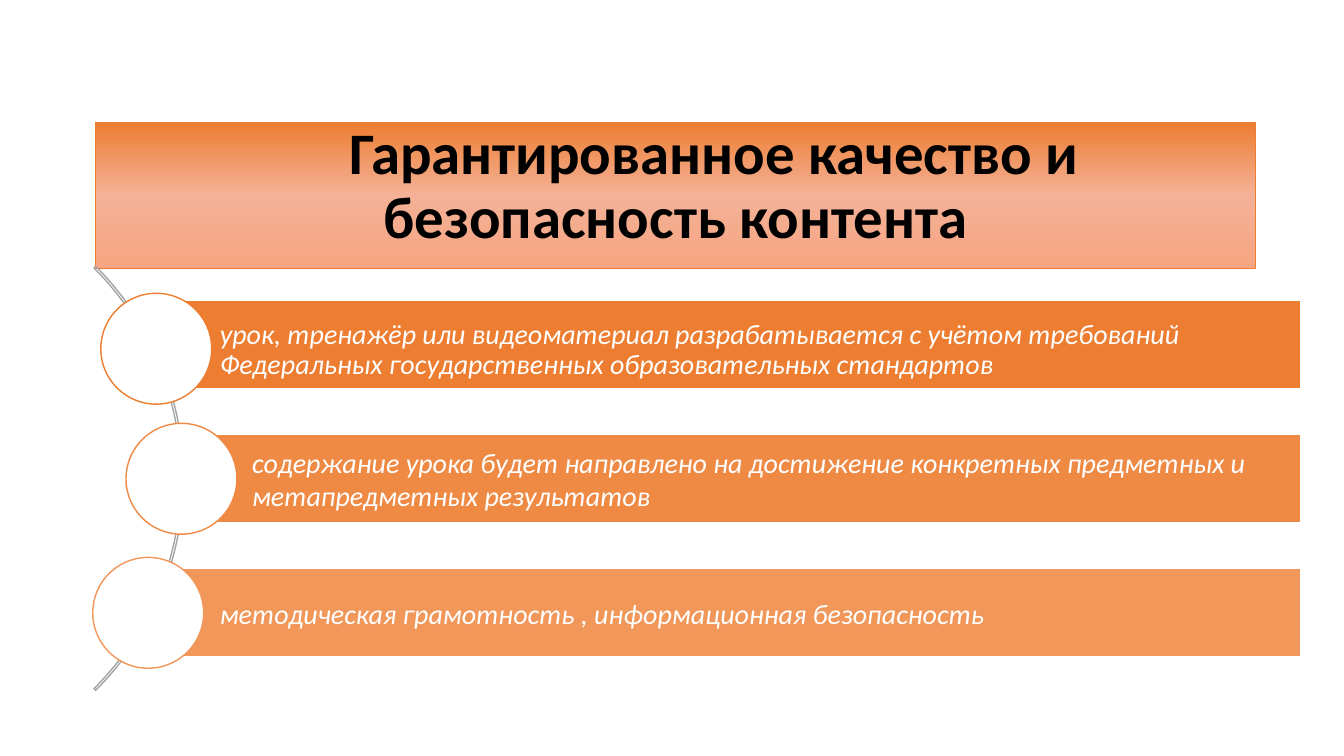
import dataclasses

import pptx
import pptx.dml.color
import pptx.enum.shapes
import pptx.enum.text
import pptx.util
from lxml import etree
from pptx.oxml.ns import qn
from pptx.util import Inches, Pt

SHAPE = pptx.enum.shapes.MSO_SHAPE
ALIGN = pptx.enum.text.PP_ALIGN
MIDDLE = pptx.enum.text.MSO_ANCHOR.MIDDLE


@dataclasses.dataclass(frozen=True)
class Theme:
    font: str = "Calibri"
    heading_size: int = 42
    item_size: int = 20
    heading_text: str = "000000"
    white: str = "FFFFFF"
    accent: str = "ED7D31"
    arc: str = "A5A5A5"
    heading_stops: tuple = ((0, "ED7D31"), (50, "F4B196"), (100, "F7A582"))


@dataclasses.dataclass(frozen=True)
class Item:
    text: str
    color: str
    bar_indent: float
    circle_indent: float
    circle_lift: float
    spacing: float = 1.0
    text_drop: float = 0.0


THEME = Theme()
HEADING = "Гарантированное качество и безопасность контента"
ITEMS = (
    Item("урок, тренажёр или видеоматериал разрабатывается с учётом требований "
         "Федеральных государственных образовательных стандартов",
         "ED7D31", 0.56, 0.08, 0.07, spacing=0.9, text_drop=0.12),
    Item("содержание урока будет направлено на достижение конкретных "
         "предметных и метапредметных результатов",
         "EF8A45", 0.88, 0.33, 0.11),
    Item("методическая грамотность , информационная безопасность",
         "F19759", 0.56, 0, 0.11),
)


def rgb(value):
    return pptx.dml.color.RGBColor.from_string(value)


def set_margins(frame, left, top, right, bottom):
    frame.margin_left, frame.margin_top = Inches(left), Inches(top)
    frame.margin_right, frame.margin_bottom = Inches(right), Inches(bottom)


def add_run(paragraph, text, size, color, bold=False, italic=False):
    run = paragraph.add_run()
    run.text = text
    run.font.name = THEME.font
    run.font.size = Pt(size)
    run.font.color.rgb = rgb(color)
    run.font.bold, run.font.italic = bold, italic


def add_outlined(slide, preset, box, line, fill=None):
    shape = slide.shapes.add_shape(preset, *map(Inches, box))
    shape.shadow.inherit = False
    if fill:
        shape.fill.solid()
        shape.fill.fore_color.rgb = rgb(fill)
    else:
        shape.fill.background()
    shape.line.color.rgb = rgb(line)
    shape.line.width = Pt(1)
    return shape


def fill_vertical_gradient(shape, stops):
    shape.fill.gradient()
    gradient = shape._element.spPr.find(qn("a:gradFill"))
    for child in list(gradient):
        gradient.remove(child)
    stop_list = etree.SubElement(gradient, qn("a:gsLst"))
    for percent, color in stops:
        stop = etree.SubElement(stop_list, qn("a:gs"), pos=str(percent * 1000))
        etree.SubElement(stop, qn("a:srgbClr"), val=color)
    etree.SubElement(gradient, qn("a:lin"), ang="5400000", scaled="0")


def place_heading(slide, left, top, width, height):
    heading = slide.shapes.title
    heading.left, heading.top = Inches(left), Inches(top)
    heading.width, heading.height = Inches(width), Inches(height)
    fill_vertical_gradient(heading, THEME.heading_stops)
    heading.line.color.rgb = rgb(THEME.accent)
    heading.line.width = Pt(0.5)
    frame = heading.text_frame
    frame.word_wrap = True
    frame.auto_size = pptx.enum.text.MSO_AUTO_SIZE.NONE
    frame.vertical_anchor = MIDDLE
    set_margins(frame, 0.1, 0.05, 0.1, 0.2)
    paragraph = frame.paragraphs[0]
    paragraph.alignment = ALIGN.CENTER
    paragraph.line_spacing = 0.9
    paragraph._p.get_or_add_pPr().set("indent", str(Inches(0.76)))
    add_run(paragraph, HEADING, THEME.heading_size, THEME.heading_text, bold=True)


def add_arc(slide, left, top, diameter):
    arc = add_outlined(slide, SHAPE.BLOCK_ARC, (left, top, diameter, diameter), THEME.arc)
    # Angles run from 315 to 45 degrees, in units of 100000/60000 degree
    for index, value in enumerate((189, 27, 0.004)):
        arc.adjustments[index] = value


def add_item(slide, item, left, top, width, height):
    """Draw one bar with its text, and the circle that overlaps its left end."""
    bar = add_outlined(
        slide, SHAPE.RECTANGLE,
        (left + item.bar_indent, top, width - item.bar_indent, height),
        THEME.white, item.color)
    frame = bar.text_frame
    frame.word_wrap = True
    frame.vertical_anchor = MIDDLE
    set_margins(frame, 0.7, 0.06 + item.text_drop, 0.06, 0.06)
    paragraph = frame.paragraphs[0]
    paragraph.alignment = ALIGN.LEFT
    paragraph.line_spacing = item.spacing
    add_run(paragraph, item.text, THEME.item_size, THEME.white, italic=True)
    diameter = 1.1
    add_outlined(
        slide, SHAPE.OVAL,
        (left + item.circle_indent, top - item.circle_lift, diameter, diameter),
        item.color, THEME.white)


def add_items(slide, left, top, width, bar_height, pitch):
    for row, item in enumerate(ITEMS):
        add_item(slide, item, left, top + row * pitch, width, bar_height)


def main():
    presentation = pptx.Presentation()
    presentation.slide_width = Inches(13.33)
    presentation.slide_height = Inches(7.5)
    slide = presentation.slides.add_slide(presentation.slide_layouts[5])
    place_heading(slide, 0.95, 1.21, 11.5, 1.45)
    add_arc(slide, -4.13, 1.77, 5.95)
    add_items(slide, 0.92, 2.98, 11.98, 0.88, 1.33)
    presentation.save("out.pptx")


if __name__ == "__main__":
    main()
